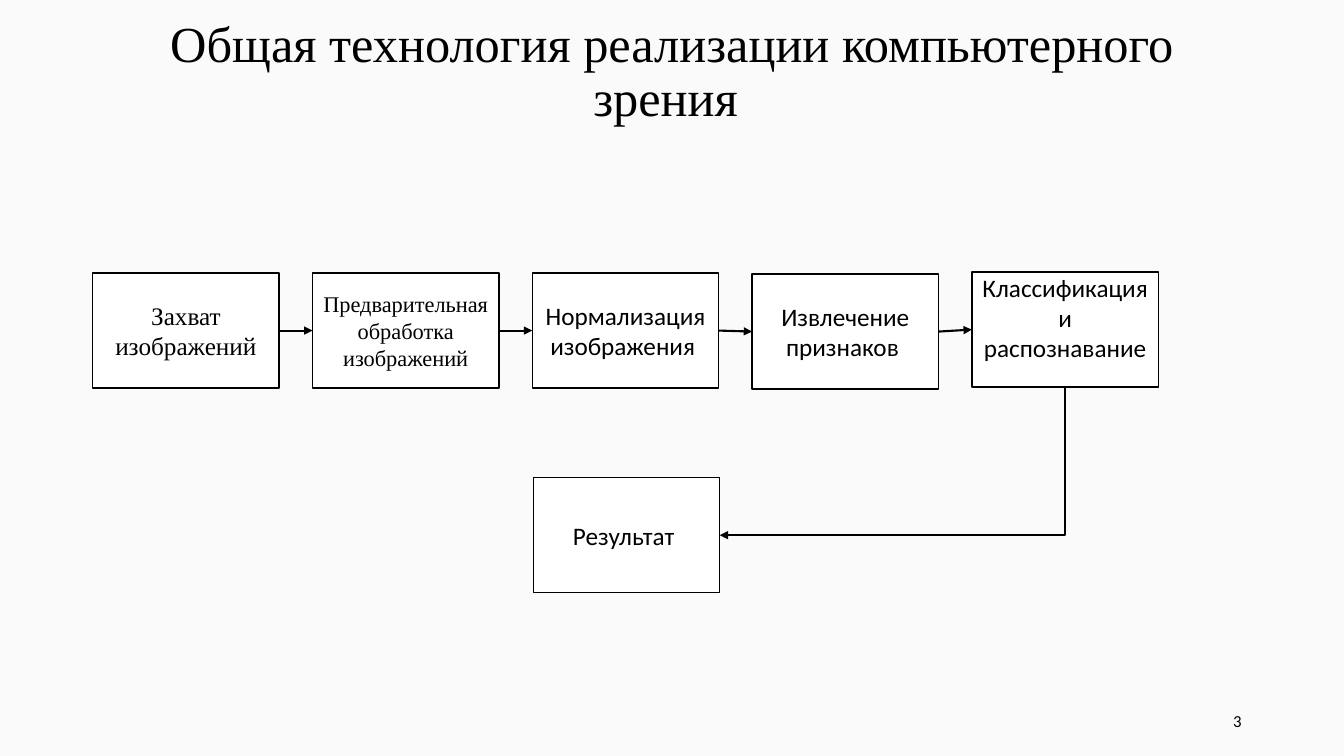
from lxml.etree import SubElement
from pptx import Presentation
from pptx.dml.color import RGBColor
from pptx.enum.shapes import MSO_CONNECTOR as CONN, MSO_SHAPE
from pptx.enum.text import MSO_ANCHOR as ANCHOR, MSO_AUTO_SIZE, PP_ALIGN as ALIGN
from pptx.oxml.ns import qn
from pptx.util import Pt

SERIF, SANS = "Times New Roman", "Calibri"
BOX_W, BOX_H = 133.2, 82.1
LEFT, STEP = 66.2, 157
STAGES = [
    ("Захват изображений", SERIF, 18, 195.1),
    ("Предварительная обработка изображений", SERIF, 16, 195.1),
    ("Нормализация изображения ", SANS, 18, 195.1),
    ("Извлечение признаков ", SANS, 18, 195.8),
    ("Классификация и распознавание", SANS, 18, 194.4),
]


def color(value):
    return RGBColor.from_string(value)


def write(tf, text, font, size, align, anchor=ANCHOR.MIDDLE):
    tf.word_wrap = True
    tf.auto_size = MSO_AUTO_SIZE.NONE
    tf.vertical_anchor = anchor
    p = tf.paragraphs[0]
    p.alignment = align
    r = p.add_run()
    r.text = text
    r.font.name = font
    r.font.size = Pt(size)
    r.font.color.rgb = color("000000")
    return p


def add_title(s, text):
    title = s.shapes.title
    title.left, title.top, title.width, title.height = Pt(66), Pt(0), Pt(828), Pt(104.4)
    p = write(title.text_frame, text, SERIF, 36, ALIGN.CENTER)
    p.line_spacing = 0.9


def add_box(s, x, y, text, font, size, anchor=ANCHOR.MIDDLE):
    box = s.shapes.add_shape(MSO_SHAPE.RECTANGLE, Pt(x), Pt(y), Pt(BOX_W), Pt(BOX_H))
    box.shadow.inherit = False
    box.fill.solid()
    box.fill.fore_color.rgb = color("FFFFFF")
    box.line.color.rgb = color("000000")
    box.line.width = Pt(1)
    write(box.text_frame, text, font, size, ALIGN.CENTER, anchor)
    return box


def style_arrow(line):
    line.line.color.rgb = color("000000")
    line.line.width = Pt(1.5)
    SubElement(line.line._get_or_add_ln(), qn("a:tailEnd"), type="triangle")
    SubElement(line._element.spPr, qn("a:effectLst"))


def add_arrow(s, source, target):
    line = s.shapes.add_connector(CONN.STRAIGHT, 0, 0, 0, 0)
    line.begin_connect(source, 3)
    line.end_connect(target, 1)
    style_arrow(line)


def add_down_left_arrow(s, source, target):
    """Run from the bottom of source down, then left to the right side of target."""
    x1, y1 = source.left + source.width // 2, source.top + source.height
    x2, y2 = target.left + target.width, target.top + target.height // 2
    # The frame is turned by 90 degrees, so its width is the vertical run.
    w, h = y2 - y1, x1 - x2
    x, y = (x1 + x2 - w) // 2, (y1 + y2 - h) // 2
    line = s.shapes.add_connector(CONN.ELBOW, x, y, x + w, y + h)
    spPr = line._element.spPr
    spPr.find(qn("a:xfrm")).set("rot", "5400000")
    spPr.find(qn("a:prstGeom")).set("prst", "bentConnector2")
    style_arrow(line)


def add_page_number(s, text):
    box = s.shapes.add_textbox(Pt(678), Pt(500.5), Pt(216), Pt(28.8))
    write(box.text_frame, text, SANS, 12, ALIGN.RIGHT)


def main():
    prs = Presentation()
    prs.slide_width, prs.slide_height = Pt(960), Pt(540)
    s = prs.slides.add_slide(prs.slide_layouts[5])
    s.background.fill.solid()
    s.background.fill.fore_color.rgb = color("FAFAFA")
    add_title(s, "Общая технология реализации компьютерного зрения ")

    boxes = []
    for i, (text, font, size, top) in enumerate(STAGES):
        last = i == len(STAGES) - 1
        anchor = ANCHOR.TOP if last else ANCHOR.MIDDLE
        boxes.append(add_box(s, LEFT + i * STEP, top, text, font, size, anchor))
    boxes[-1].text_frame.margin_top = 0
    result = add_box(s, 380.9, 341.3, "Результат ", SANS, 18)

    for source, target in zip(boxes, boxes[1:]):
        add_arrow(s, source, target)
    add_down_left_arrow(s, boxes[-1], result)
    add_page_number(s, "3")
    prs.save("out.pptx")


if __name__ == "__main__":
    main()
